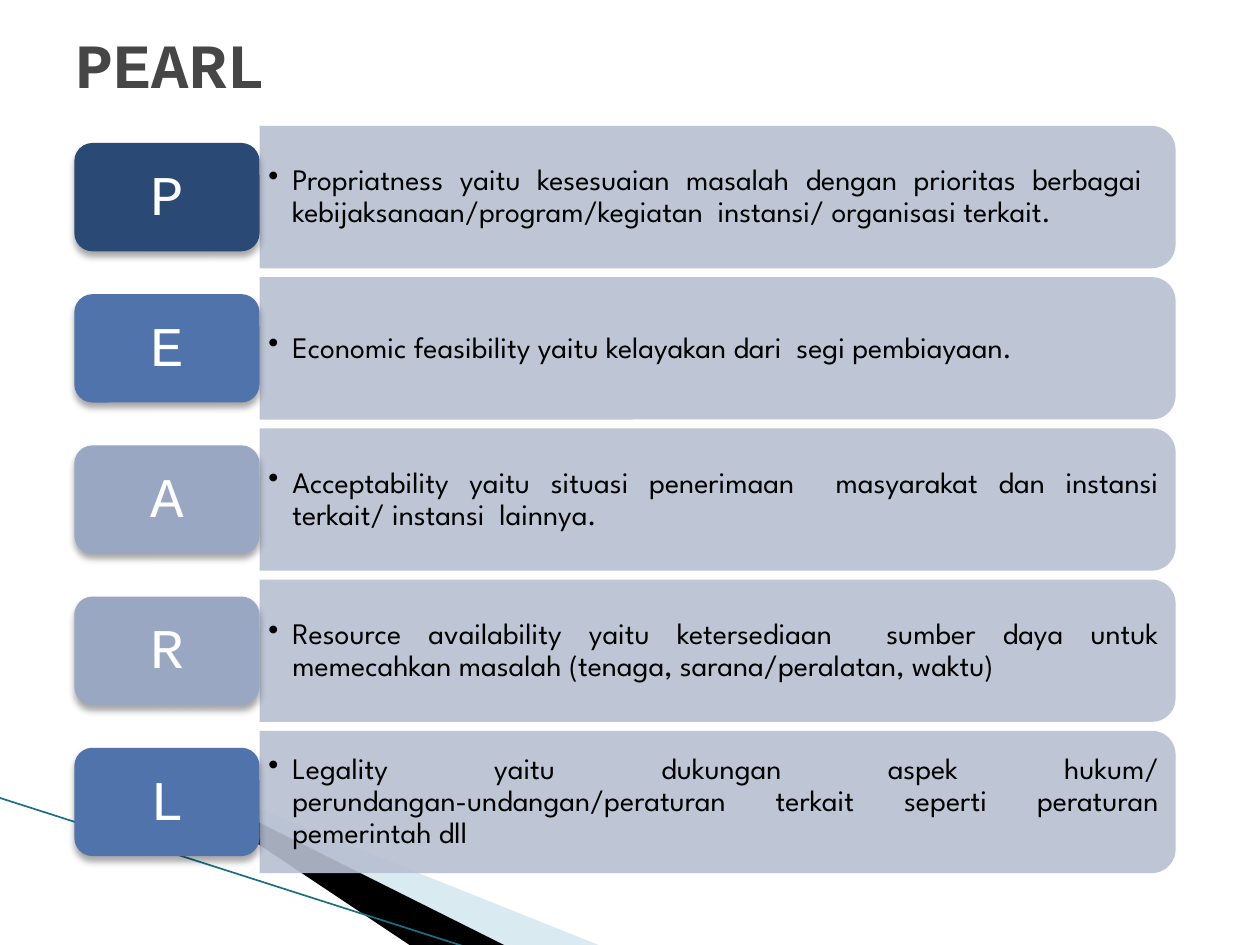
from dataclasses import dataclass

from lxml import etree
from pptx import Presentation
from pptx.dml.color import RGBColor
from pptx.enum import shapes, text
from pptx.oxml import ns
from pptx.util import Inches, Pt


@dataclass(frozen=True)
class Theme:
    heading_font: str = "Courier New"
    body_font: str = "League Spartan"
    title_size: int = 36
    letter_size: int = 32
    body_size: int = 17
    title: str = "464646"
    body: str = "000000"
    letter: str = "FFFFFF"
    panel: str = "B7BFD1"
    navy: str = "2A4974"
    blue: str = "5173AC"
    pale: str = "9AA7C3"
    swoosh_light: str = "A0CBDC"
    swoosh_dark: str = "000000"
    swoosh_line: str = "1B6F83"


@dataclass(frozen=True)
class Criterion:
    letter: str
    meaning: str
    color: str


THEME = Theme()
CRITERIA = [
    Criterion("P", "Propriatness yaitu kesesuaian masalah dengan prioritas berbagai  "
              "kebijaksanaan/program/kegiatan  instansi/ organisasi terkait.", THEME.navy),
    Criterion("E", "Economic feasibility yaitu kelayakan dari  segi pembiayaan.", THEME.blue),
    Criterion("A", "Acceptability yaitu situasi penerimaan  masyarakat dan instansi "
              "terkait/ instansi  lainnya.", THEME.pale),
    Criterion("R", "Resource availability yaitu ketersediaan  sumber daya untuk "
              "memecahkan masalah (tenaga, sarana/peralatan, waktu)", THEME.pale),
    Criterion("L", "Legality yaitu dukungan aspek hukum/ perundangan-undangan/peraturan "
              "terkait seperti peraturan pemerintah dll", THEME.blue),
]

TOP, PITCH = 1.0, 1.2
LABEL_LEFT, LABEL_WIDTH, LABEL_HEIGHT = 0.59, 1.47, 0.86
PANEL_LEFT, PANEL_WIDTH, PANEL_HEIGHT = LABEL_LEFT + LABEL_WIDTH, 7.27, 1.13
TEXT_WIDTH, TEXT_HEIGHT = 7.21, 1.02


def add_xml(parent, tag: str, **attributes):
    return etree.SubElement(parent, ns.qn(tag), attributes)


def paint(shape, color: str, opacity: int = 100) -> None:
    """Fill a shape flatly, with neither outline nor shadow."""
    shape.shadow.inherit = False
    shape.line.fill.background()
    shape.fill.solid()
    shape.fill.fore_color.rgb = RGBColor.from_string(color)
    if opacity < 100:
        fill_color = shape.fill._xPr.find(ns.qn("a:solidFill"))[0]
        add_xml(fill_color, "a:alpha", val=str(opacity * 1000))


def drop_shadow(shape) -> None:
    effects = shape._element.spPr.find(ns.qn("a:effectLst"))
    shadow = add_xml(effects, "a:outerShdw", blurRad=str(Pt(4)), dist=str(Pt(3)),
                     dir="5400000", rotWithShape="0")
    color = add_xml(shadow, "a:srgbClr", val="000000")
    add_xml(color, "a:alpha", val="35000")


def write(shape, words: str, font: str, size: int, color: str, align, inset: tuple[float, float]):
    """Put one vertically centred paragraph in a shape and return it."""
    frame = shape.text_frame
    frame.word_wrap = True
    frame.vertical_anchor = text.MSO_ANCHOR.MIDDLE
    frame.margin_left = frame.margin_right = Inches(inset[0])
    frame.margin_top = frame.margin_bottom = Inches(inset[1])
    paragraph = frame.paragraphs[0]
    paragraph.text = words
    paragraph.alignment = align
    paragraph.font.name = font
    paragraph.font.size = Pt(size)
    paragraph.font.color.rgb = RGBColor.from_string(color)
    return paragraph


def add_bullet(paragraph, indent: float) -> None:
    properties = paragraph._p.get_or_add_pPr()
    properties.set("marL", str(Inches(indent)))
    properties.set("indent", str(-Inches(indent)))
    bullet = etree.Element(ns.qn("a:buChar"), {"char": "•"})
    properties.find(ns.qn("a:defRPr")).addprevious(bullet)


def add_swoosh(slide, points: list[tuple[float, float]], color: str, opacity: int = 100) -> None:
    builder = slide.shapes.build_freeform(*points[0], scale=Inches(1))
    builder.add_line_segments(points[1:], close=True)
    paint(builder.convert_to_shape(), color, opacity)


def add_decoration(slide) -> None:
    add_swoosh(slide, [(0.55, 6.5), (5.95, 7.5), (4.56, 7.5)], THEME.swoosh_light, 40)
    add_swoosh(slide, [(0.53, 6.49), (4.57, 7.5), (3.72, 7.5)], THEME.swoosh_dark)
    edge = slide.shapes.add_connector(shapes.MSO_CONNECTOR.STRAIGHT, Inches(-0.01), Inches(6.33),
                                      Inches(3.71), Inches(7.52))
    edge.line.color.rgb = RGBColor.from_string(THEME.swoosh_line)
    edge.line.width = Pt(0.95)
    add_xml(edge._element.spPr, "a:effectLst")


def add_criterion(slide, criterion: Criterion, top: float) -> None:
    """Draw a lettered label and, to its right, the panel with its meaning."""
    middle = top + PANEL_HEIGHT / 2
    # The panel is an upright shape turned a quarter, so its rounded end faces right.
    panel = slide.shapes.add_shape(
        shapes.MSO_SHAPE.ROUND_2_SAME_RECTANGLE,
        Inches(PANEL_LEFT + (PANEL_WIDTH - PANEL_HEIGHT) / 2), Inches(middle - PANEL_WIDTH / 2),
        Inches(PANEL_HEIGHT), Inches(PANEL_WIDTH))
    panel.rotation = 90
    paint(panel, THEME.panel, 90)

    meaning = slide.shapes.add_textbox(Inches(PANEL_LEFT), Inches(middle - TEXT_HEIGHT / 2),
                                       Inches(TEXT_WIDTH), Inches(TEXT_HEIGHT))
    paragraph = write(meaning, criterion.meaning, THEME.body_font, THEME.body_size, THEME.body,
                      text.PP_ALIGN.JUSTIFY, (0.07, 0.04))
    paragraph.line_spacing = 0.9
    add_bullet(paragraph, 0.19)

    label = slide.shapes.add_shape(
        shapes.MSO_SHAPE.ROUNDED_RECTANGLE, Inches(LABEL_LEFT), Inches(middle - LABEL_HEIGHT / 2),
        Inches(LABEL_WIDTH), Inches(LABEL_HEIGHT))
    paint(label, criterion.color)
    drop_shadow(label)
    paragraph = write(label, criterion.letter, THEME.heading_font, THEME.letter_size,
                      THEME.letter, text.PP_ALIGN.CENTER, (0.13, 0.07))
    paragraph.line_spacing = 0.9


def main() -> None:
    deck = Presentation()
    deck.slide_width, deck.slide_height = Inches(10), Inches(7.5)
    slide = deck.slides.add_slide(deck.slide_layouts[6])
    add_decoration(slide)
    for row, criterion in enumerate(CRITERIA):
        add_criterion(slide, criterion, TOP + row * PITCH)
    title = slide.shapes.add_textbox(Inches(0.5), Inches(0.25), Inches(9), Inches(0.5))
    heading = write(title, "PEARL", THEME.heading_font, THEME.title_size, THEME.title,
                    text.PP_ALIGN.LEFT, (0.1, 0.05))
    heading.font.bold = True
    deck.save("out.pptx")


if __name__ == "__main__":
    main()
